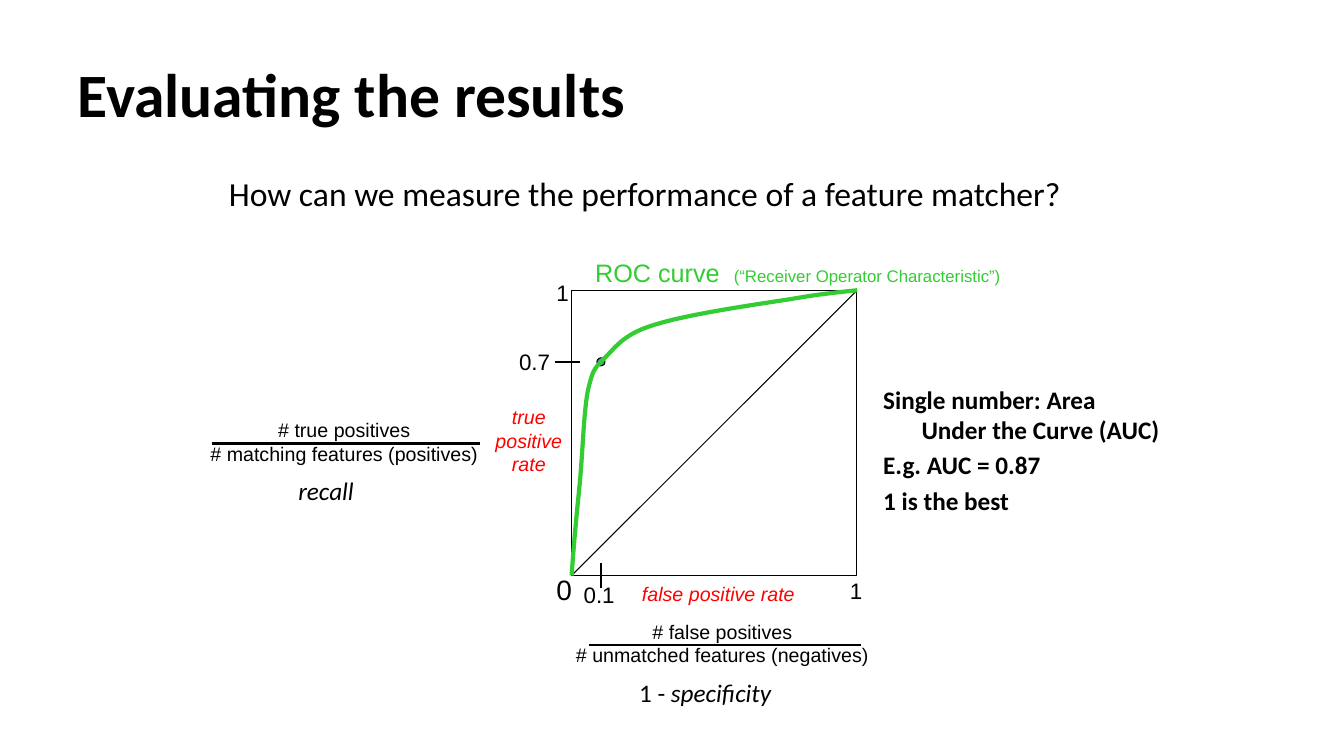
from dataclasses import dataclass

from lxml import etree
from pptx import Presentation
from pptx import util as u
from pptx.dml.color import RGBColor
from pptx.enum import shapes, text
from pptx.oxml import ns

BLACK = RGBColor(0x00, 0x00, 0x00)
RED = RGBColor(0xFF, 0x00, 0x00)
GREEN = RGBColor(0x33, 0xCC, 0x33)
BLUE = RGBColor(0x4F, 0x81, 0xBD)

PLOT_LEFT, PLOT_TOP, PLOT_SIZE = 5.67, 2.88, 2.83
PLOT_RIGHT, PLOT_BOTTOM = PLOT_LEFT + PLOT_SIZE, PLOT_TOP + PLOT_SIZE
POINT_X, POINT_Y = 5.96, 3.59
POINT_SIZE = 0.08
TICK_HALF = 0.125
CURVE_START = (PLOT_LEFT, PLOT_BOTTOM)
CURVE_SEGMENTS = [
    ((5.69, 5.41), (5.72, 5.1), (5.75, 4.8)),
    ((5.78, 4.49), (5.79, 4.09), (5.83, 3.88)),
    ((5.88, 3.67), (5.89, 3.66), (6, 3.55)),
    ((6.11, 3.44), (6.19, 3.31), (6.5, 3.22)),
    ((6.81, 3.12), (7.5, 3.02), (7.83, 2.97)),
    ((8.17, 2.91), (8.33, 2.9), (PLOT_RIGHT, PLOT_TOP)),
]
CURVE_STEPS = 12


@dataclass(frozen=True)
class Run:
    words: str
    size: float
    color: RGBColor = BLACK
    font: str = "Arial"
    italic: bool = False
    bold: bool = False


@dataclass(frozen=True)
class Box:
    left: float
    top: float
    width: float
    height: float


@dataclass(frozen=True)
class Label:
    box: Box
    lines: list[list[Run]]
    centered: bool = False
    wrap: bool = True


@dataclass(frozen=True)
class Fraction:
    box: Box
    numerator: str
    denominator: str
    bar_left: float
    bar_right: float


LABELS = [
    Label(Box(5.05, 3.4, 0.83, 0.37), [[Run("0.7", 16)]]),
    Label(Box(5.42, 5.63, 0.5, 0.43), [[Run("0", 20)]]),
    Label(Box(8.33, 5.68, 0.33, 0.37), [[Run("1", 16)]]),
    Label(Box(5.42, 2.72, 0.33, 0.37), [[Run("1", 16)]]),
    Label(Box(5.69, 5.72, 0.83, 0.37), [[Run("0.1", 16)]]),
    Label(Box(5.25, 5.72, 3.75, 0.33), [[Run("false positive rate", 14, RED, italic=True)]], True),
    Label(
        Box(4.58, 3.97, 1.33, 1.04),
        [[Run(word, 14, RED, italic=True)] for word in ("true", "positive", "rate")],
        True,
    ),
    Label(
        Box(4.75, 2.5, 6.33, 0.4),
        [[Run("ROC curve  ", 18, GREEN), Run("(“Receiver Operator Characteristic”)", 12, GREEN)]],
        True,
    ),
    Label(Box(2.86, 4.67, 0.75, 0.4), [[Run("recall", 18, font="Calibri", italic=True)]], wrap=False),
    Label(
        Box(6.24, 6.67, 1.54, 0.4),
        [[Run("1 - ", 18, font="Calibri"), Run("specificity", 18, font="Calibri", italic=True)]],
        wrap=False,
    ),
]
FRACTIONS = [
    Fraction(Box(1.83, 4.1, 3.17, 0.57), "# true positives", "# matching features (positives)", 2.1, 4.76),
    Fraction(Box(5.58, 6.1, 3.17, 0.57), "# false positives", "# unmatched features (negatives)", 5.84, 8.54),
]
AUC_NOTES = ["Single number: Area Under the Curve (AUC)", "E.g. AUC = 0.87", "1 is the best"]


def inches(box: Box) -> list[u.Length]:
    return [u.Inches(value) for value in (box.left, box.top, box.width, box.height)]


def write_lines(frame, lines: list[list[Run]], alignment) -> None:
    for index, line in enumerate(lines):
        paragraph = frame.paragraphs[0] if index == 0 else frame.add_paragraph()
        paragraph.alignment = alignment
        for item in line:
            run = paragraph.add_run()
            run.text = item.words
            run.font.name = item.font
            run.font.size = u.Pt(item.size)
            run.font.color.rgb = item.color
            run.font.italic = item.italic
            run.font.bold = item.bold


def draw_label(parent, label: Label) -> None:
    frame = parent.add_textbox(*inches(label.box)).text_frame
    frame.word_wrap = label.wrap
    alignment = text.PP_ALIGN.CENTER if label.centered else text.PP_ALIGN.LEFT
    write_lines(frame, label.lines, alignment)


def draw_line(parent, start: tuple[float, float], end: tuple[float, float], width: float) -> None:
    points = [u.Inches(value) for value in (*start, *end)]
    connector = parent.add_connector(shapes.MSO_CONNECTOR.STRAIGHT, *points)
    connector.line.color.rgb = BLACK
    connector.line.width = u.Pt(width)
    etree.SubElement(connector._element.spPr, ns.qn("a:effectLst"))


def draw_fraction(slide, fraction: Fraction) -> None:
    group = slide.shapes.add_group_shape()
    lines = [[Run(fraction.numerator, 14)], [Run(fraction.denominator, 14)]]
    draw_label(group.shapes, Label(fraction.box, lines, True))
    bar_y = fraction.box.top + 0.3
    draw_line(group.shapes, (fraction.bar_left, bar_y), (fraction.bar_right, bar_y), 1.5)


def style_outline(shape, color: RGBColor, width: float) -> None:
    shape.shadow.inherit = False
    shape.fill.background()
    shape.line.color.rgb = color
    shape.line.width = u.Pt(width)


def curve_points() -> list[tuple[float, float]]:
    points = []
    start = CURVE_START
    for first, second, end in CURVE_SEGMENTS:
        for step in range(1, CURVE_STEPS + 1):
            t = step / CURVE_STEPS
            weights = ((1 - t) ** 3, 3 * t * (1 - t) ** 2, 3 * t**2 * (1 - t), t**3)
            corners = (start, first, second, end)
            x, y = (sum(w * corner[axis] for w, corner in zip(weights, corners)) for axis in (0, 1))
            points.append((x, y))
        start = end
    return points


def draw_curve(slide) -> None:
    start, *others = [(u.Inches(x), u.Inches(y)) for x, y in [CURVE_START, *curve_points()]]
    builder = slide.shapes.build_freeform(*start)
    builder.add_line_segments(others, close=False)
    style_outline(builder.convert_to_shape(), GREEN, 3)


def fill_placeholder(placeholder, box: Box, lines: list[list[Run]], hanging: bool = False) -> None:
    placeholder.left, placeholder.top, placeholder.width, placeholder.height = inches(box)
    frame = placeholder.text_frame
    frame.word_wrap = True
    frame.auto_size = text.MSO_AUTO_SIZE.NONE
    frame.vertical_anchor = text.MSO_ANCHOR.TOP
    write_lines(frame, lines, text.PP_ALIGN.LEFT)
    if hanging:
        for paragraph in frame.paragraphs:
            properties = paragraph._p.get_or_add_pPr()
            properties.set("marL", str(u.Inches(0.38)))
            properties.set("indent", str(u.Inches(-0.38)))
            etree.SubElement(properties, ns.qn("a:buNone"))


def main() -> None:
    presentation = Presentation()
    presentation.slide_width, presentation.slide_height = u.Inches(13.33), u.Inches(7.5)
    slide = presentation.slides.add_slide(presentation.slide_layouts[3])

    title, question, notes = slide.placeholders
    fill_placeholder(
        title, Box(0.67, 0.5, 12, 1.25), [[Run("Evaluating the results", 44, font="Calibri", bold=True)]]
    )
    question_run = Run("How can we measure the performance of a feature matcher?", 24, font="Calibri")
    fill_placeholder(question, Box(2.17, 1.67, 9, 0.75), [[question_run]], True)
    note_lines = [[Run(note, 18, font="Calibri", bold=True)] for note in AUC_NOTES]
    fill_placeholder(notes, Box(8.66, 3.76, 2.95, 2.67), note_lines, True)

    plot_box = Box(PLOT_LEFT, PLOT_TOP, PLOT_SIZE, PLOT_SIZE)
    plot = slide.shapes.add_shape(shapes.MSO_SHAPE.RECTANGLE, *inches(plot_box))
    style_outline(plot, BLACK, 0.75)
    point_box = Box(POINT_X - POINT_SIZE / 2, POINT_Y - POINT_SIZE / 2, POINT_SIZE, POINT_SIZE)
    point = slide.shapes.add_shape(shapes.MSO_SHAPE.OVAL, *inches(point_box))
    style_outline(point, BLACK, 0.75)
    point.fill.solid()
    point.fill.fore_color.rgb = BLUE

    draw_line(slide.shapes, (POINT_X, PLOT_BOTTOM - TICK_HALF), (POINT_X, PLOT_BOTTOM + TICK_HALF), 1.5)
    draw_line(slide.shapes, (5.5, POINT_Y), (5.75, POINT_Y), 1.5)
    draw_line(slide.shapes, CURVE_START, (PLOT_RIGHT, PLOT_TOP), 0.75)
    draw_curve(slide)
    for fraction in FRACTIONS:
        draw_fraction(slide, fraction)
    for label in LABELS:
        draw_label(slide.shapes, label)
    presentation.save("out.pptx")


if __name__ == "__main__":
    main()
